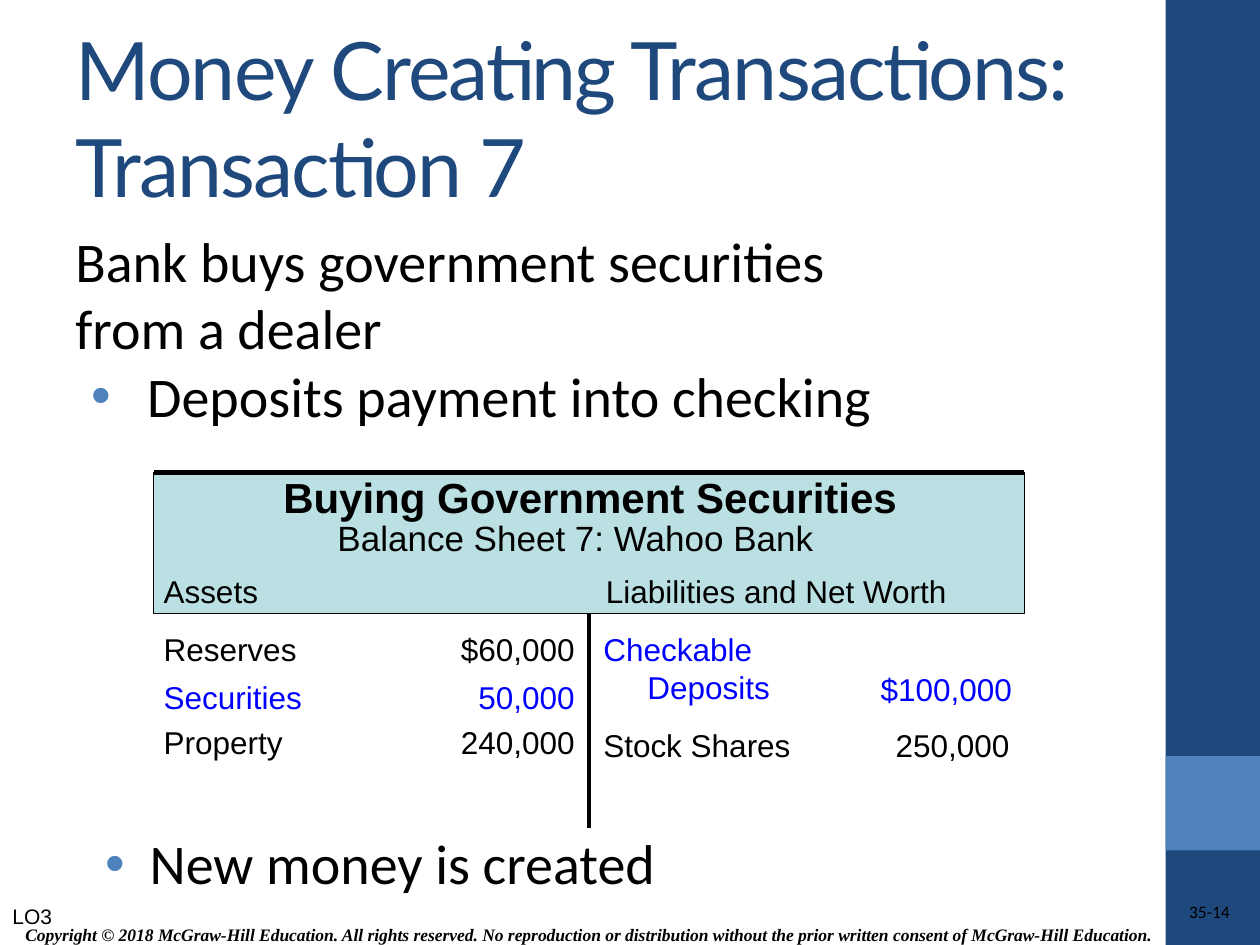
from lxml.etree import SubElement
from pptx import Presentation
from pptx.dml.color import RGBColor
from pptx.enum.shapes import MSO_CONNECTOR, MSO_SHAPE
from pptx.enum.text import MSO_ANCHOR, PP_ALIGN
from pptx.oxml.ns import qn
from pptx.util import Inches, Pt

COLORS = {"navy": "1F497D", "blue": "4F81BD", "teal": "BBE0E3",
          "black": "000000", "link": "0000FF"}

deck = Presentation()
deck.slide_width, deck.slide_height = Inches(10), Inches(7.5)
page = deck.slides.add_slide(deck.slide_layouts[6])
COLUMN = deck.slide_width / 10
ROW = deck.slide_height / 7.5


def cells(left, top, width, height):
    """Turn grid columns and rows into slide lengths."""
    return [int(left * COLUMN), int(top * ROW), int(width * COLUMN), int(height * ROW)]


def add_text(area, lines, color="black", frame_format=None, align=PP_ALIGN.LEFT, **font):
    """Add a text box; each line is (text, left margin, bullet indent), in columns."""
    box = page.shapes.add_textbox(*cells(*area))
    frame = box.text_frame
    for name, value in {"word_wrap": True, **(frame_format or {})}.items():
        setattr(frame, name, value)
    for index, (text, margin, bullet) in enumerate(lines):
        para = frame.paragraphs[0] if index == 0 else frame.add_paragraph()
        para.alignment = align
        properties = para._p.get_or_add_pPr()
        properties.set("marL", str(int(margin * COLUMN)))
        properties.set("indent", str(int(-bullet * COLUMN)))
        if bullet:
            bullet_color = SubElement(properties, qn("a:buClr"))
            SubElement(bullet_color, qn("a:srgbClr"), val=COLORS["blue"])
            SubElement(properties, qn("a:buFont"), typeface="Arial")
            SubElement(properties, qn("a:buChar"), char="•")
        span = para.add_run()
        span.text = text
        for name, value in font.items():
            setattr(span.font, name, value)
        span.font.color.rgb = RGBColor.from_string(COLORS[color])
    return box


# Side band, footer and slide number
for top, height, color in [(0, 7.5, "navy"), (6, 0.75, "blue")]:
    band = page.shapes.add_shape(MSO_SHAPE.RECTANGLE, *cells(9.25, top, 0.75, height))
    band.shadow.inherit = False
    band.fill.solid()
    band.fill.fore_color.rgb = RGBColor.from_string(COLORS[color])
    band.line.fill.background()

middle = {"vertical_anchor": MSO_ANCHOR.MIDDLE}
add_text((0.06, 7.28, 9.22, 0.28),
         [("Copyright © 2018 McGraw-Hill Education. All rights reserved. No reproduction or "
           "distribution without the prior written consent of McGraw-Hill Education.", 0, 0)],
         frame_format=middle, align=PP_ALIGN.CENTER,
         name="Times New Roman", size=Pt(10), bold=True, italic=True)
no_margins = {f"margin_{side}": 0 for side in ("left", "top", "right", "bottom")}
add_text((7.81, 7.15, 1.95, 0.2), [("35-14", 0, 0)], frame_format=no_margins,
         align=PP_ALIGN.RIGHT, name="Calibri", size=Pt(10))

# Title and body
title = add_text((0.5, 0.3, 8.33, 1.25), [("Money Creating Transactions: Transaction 7", 0, 0)],
                 "navy", middle, name="Lato", size=Pt(46))
title.text_frame.paragraphs[0].runs[0].font._element.set("spc", "-100")
add_text((0.5, 1.75, 8.33, 1.75),
         [("Bank buys government securities", 0, 0), ("from a dealer", 0, 0),
          ("Deposits payment into checking", 0.57, 0.44)],
         name="Calibri", size=Pt(32))

# Balance sheet frame
SHEET_LEFT, SHEET_RIGHT, SHEET_TOP, HEADER_BOTTOM = 1.22, 8.13, 3.75, 4.87
SHEET_MIDDLE = (SHEET_LEFT + SHEET_RIGHT) / 2
header = page.shapes.add_shape(
    MSO_SHAPE.RECTANGLE,
    *cells(SHEET_LEFT, SHEET_TOP, SHEET_RIGHT - SHEET_LEFT, HEADER_BOTTOM - SHEET_TOP))
header.shadow.inherit = False
header.fill.solid()
header.fill.fore_color.rgb = RGBColor.from_string(COLORS["teal"])
header.line.color.rgb = RGBColor.from_string(COLORS["black"])
header.line.width = Pt(0.75)
for ends, weight in [((SHEET_MIDDLE, HEADER_BOTTOM, SHEET_MIDDLE, 6.57), 2.25),
                     ((SHEET_LEFT, SHEET_TOP, SHEET_RIGHT, SHEET_TOP), 3)]:
    rule = page.shapes.add_connector(MSO_CONNECTOR.STRAIGHT, *cells(*ends))
    rule.line.color.rgb = RGBColor.from_string(COLORS["black"])
    rule.line.width = Pt(weight)
    SubElement(rule._element.spPr, qn("a:effectLst"))

# Balance sheet headings
add_text((2.15, 3.69, 5.2, 0.5), [("Buying Government Securities", 0, 0)],
         name="Arial", size=Pt(24), bold=True)
add_text((2.58, 4.05, 4.2, 0.43), [("Balance Sheet 7: Wahoo Bank", 0, 0)],
         name="Arial", size=Pt(20))

entry = {"name": "Arial", "size": Pt(18)}
for text, left in [("Assets", 1.2), ("Liabilities and Net Worth", 4.71)]:
    add_text((left, 4.49, 3.2, 0.4), [(text, 0, 0)], **entry)

# Balance sheet entries: labels start at the left, amounts end at the right
ASSET_LEFT, DEBT_LEFT, ENTRY_WIDTH = 1.2, 4.69, 1.8
labels = [(ASSET_LEFT, 4.95, ["Reserves"], "black"),
          (ASSET_LEFT, 5.33, ["Securities"], "link"),
          (ASSET_LEFT, 5.69, ["Property"], "black"),
          (DEBT_LEFT, 4.95, ["Checkable", "Deposits"], "link"),
          (DEBT_LEFT, 5.71, ["Stock Shares"], "black")]
for left, top, words, color in labels:
    lines = [(word, 0.35 * index, 0) for index, word in enumerate(words)]
    add_text((left, top, ENTRY_WIDTH, 0.4 * len(words)), lines, color, **entry)

amounts = [(4.66, 4.95, "$60,000", "black"), (4.66, 5.33, "50,000", "link"),
           (4.66, 5.69, "240,000", "black"),
           (8.13, 5.27, "$100,000", "link"), (8.11, 5.71, "250,000", "black")]
for right, top, amount, color in amounts:
    add_text((right - ENTRY_WIDTH, top, ENTRY_WIDTH, 0.4), [(amount, 0, 0)], color,
             align=PP_ALIGN.RIGHT, **entry)

# Closing point and learning objective
add_text((0.74, 6.53, 7.4, 0.64), [("New money is created", 0.35, 0.35)],
         name="Calibri", size=Pt(32))
add_text((0, 7.12, 1.02, 0.3), [("LO3", 0, 0)], name="Arial", size=Pt(12))

deck.save("out.pptx")
